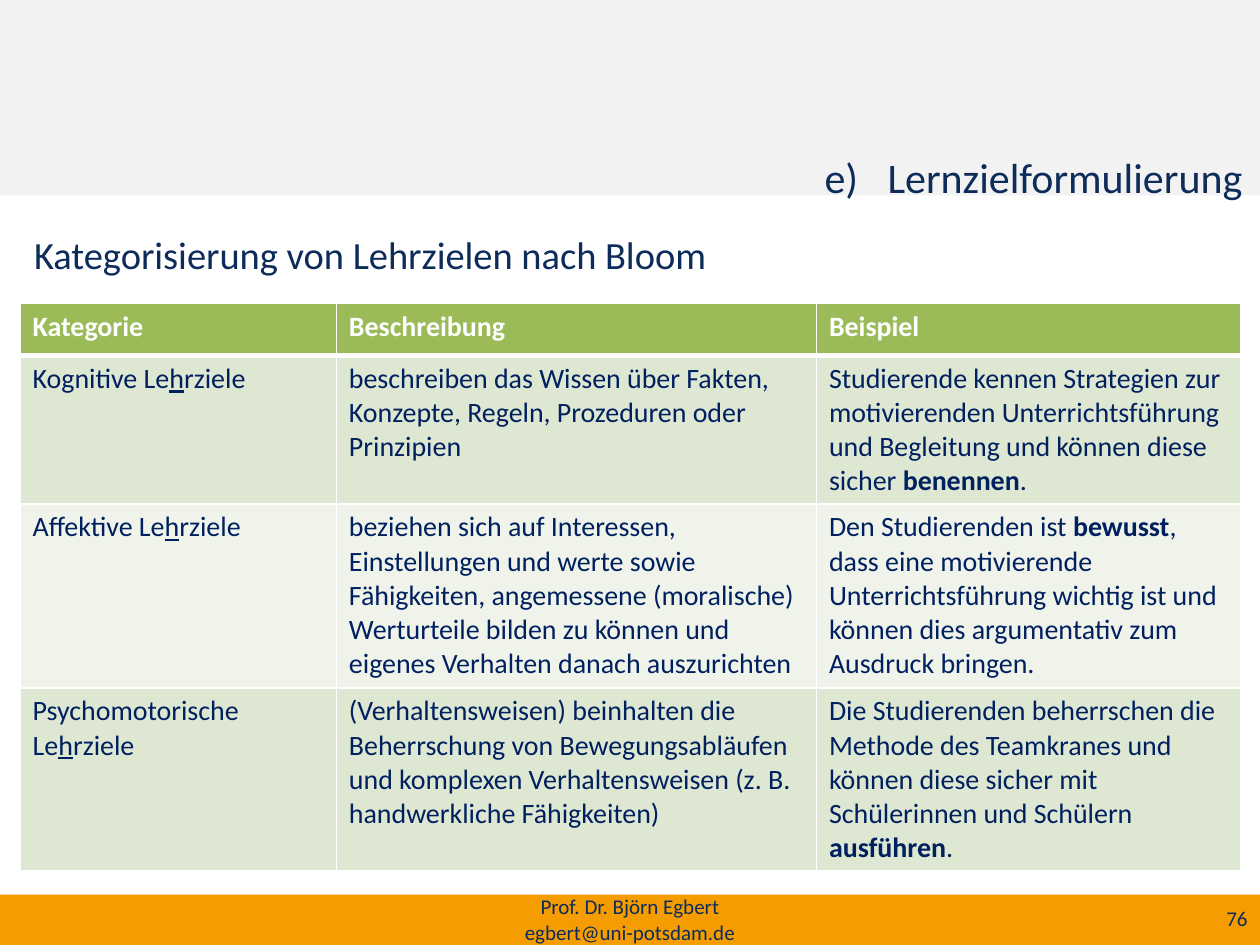
import pptx
import pptx.util
import pptx.dml.color
import pptx.enum.shapes
import pptx.enum.text
import pptx.oxml.ns
from lxml import etree

Inches = pptx.util.Inches
Pt = pptx.util.Pt
ALIGN = pptx.enum.text.PP_ALIGN
ANCHOR = pptx.enum.text.MSO_ANCHOR
qn = pptx.oxml.ns.qn

COLORS = {
    "band": "F2F2F2",
    "footer": "F59C00",
    "ink": "0D2C5A",
    "cell": "002060",
    "white": "FFFFFF",
    "header": "9BBB59",
    "odd": "DEE7D1",
    "even": "EFF3EA",
}

HEADER = ["Kategorie", "Beschreibung", "Beispiel"]
GOALS = [
    (
        "Kognitive Le",
        "beschreiben das Wissen über Fakten, Konzepte, Regeln, Prozeduren oder Prinzipien",
        [("Studierende kennen Strategien zur motivierenden Unterrichtsführung und "
          "Begleitung und können diese sicher ", ""), ("benennen", "b"), (".", "")],
    ),
    (
        "Affektive Le",
        "beziehen sich auf Interessen, Einstellungen und werte sowie Fähigkeiten, "
        "angemessene (moralische) Werturteile bilden zu können und eigenes Verhalten "
        "danach auszurichten",
        [("Den Studierenden ist ", ""), ("bewusst", "b"),
         (", dass eine motivierende Unterrichtsführung wichtig ist und können dies "
          "argumentativ zum Ausdruck bringen.", "")],
    ),
    (
        "Psychomotorische Le",
        "(Verhaltensweisen) beinhalten die Beherrschung von Bewegungsabläufen und "
        "komplexen Verhaltensweisen (z. B. handwerkliche Fähigkeiten)",
        [("Die Studierenden beherrschen die Methode des Teamkranes und können diese "
          "sicher mit Schülerinnen und Schülern ", ""), ("ausführen", "b"), (".", "")],
    ),
]


def rgb(name):
    return pptx.dml.color.RGBColor.from_string(COLORS[name])


class SlideBuilder:
    font = "Calibri"

    def __init__(self, page):
        self.page = page

    def add_span(self, para, text, size, color="ink", marks=""):
        span = para.add_run()
        span.text = text
        span.font.name = self.font
        span.font.size = Pt(size)
        span.font.color.rgb = rgb(color)
        span.font.bold = "b" in marks
        span.font.underline = "u" in marks

    def place(self, shape, left, top, width, height):
        shape.left, shape.top = Inches(left), Inches(top)
        shape.width, shape.height = Inches(width), Inches(height)

    def title(self, text, area, size):
        title = self.page.shapes.title
        self.place(title, *area)
        frame = title.text_frame
        frame.auto_size = pptx.enum.text.MSO_AUTO_SIZE.NONE
        frame.vertical_anchor = ANCHOR.TOP
        para = frame.paragraphs[0]
        para.alignment = ALIGN.LEFT
        self.add_span(para, text, size)

    def bar(self, area, color):
        bar = self.page.shapes.add_shape(
            pptx.enum.shapes.MSO_SHAPE.RECTANGLE, *map(Inches, area))
        bar.shadow.inherit = False
        bar.fill.solid()
        bar.fill.fore_color.rgb = rgb(color)
        bar.line.fill.background()

    def text(self, lines, area, size, align, anchor=ANCHOR.MIDDLE):
        box = self.page.shapes.add_textbox(*map(Inches, area))
        frame = box.text_frame
        frame.word_wrap = True
        frame.vertical_anchor = anchor
        para = frame.paragraphs[0]
        para.alignment = align
        for index, line in enumerate(lines):
            if index:
                para.add_line_break()
            self.add_span(para, line, size)
        return para

    def number(self, para, scheme, start, indent):
        properties = para._p.get_or_add_pPr()
        properties.set("marL", str(Inches(indent)))
        properties.set("indent", str(-Inches(indent)))
        etree.SubElement(properties, qn("a:buFont"), typeface="+mj-lt")
        etree.SubElement(properties, qn("a:buAutoNum"), type=scheme, startAt=str(start))

    def border(self, cell, widths):
        properties = cell._tc.get_or_add_tcPr()
        for side, width in zip("LRTB", widths):
            line = etree.SubElement(properties, qn("a:ln" + side), w=str(Pt(width)))
            fill = etree.SubElement(line, qn("a:solidFill"))
            etree.SubElement(fill, qn("a:srgbClr"), val=COLORS["white"])

    def table(self, rows, left, top, widths, heights, size):
        table = self.page.shapes.add_table(
            len(rows), len(widths), Inches(left), Inches(top),
            Inches(sum(widths)), Inches(sum(heights))).table
        for column, width in zip(table.columns, widths):
            column.width = Inches(width)
        for row, height in zip(table.rows, heights):
            row.height = Inches(height)
        for y, row in enumerate(rows):
            fill = "header" if y == 0 else "odd" if y % 2 else "even"
            color = "white" if y == 0 else "cell"
            for x, spans in enumerate(row):
                cell = table.cell(y, x)
                self.border(cell, (1, 1, 3 if y == 1 else 1, 3 if y == 0 else 1))
                cell.fill.solid()
                cell.fill.fore_color.rgb = rgb(fill)
                for text, marks in spans:
                    self.add_span(cell.text_frame.paragraphs[0], text, size, color, marks)


def main():
    deck = pptx.Presentation()
    deck.slide_width, deck.slide_height = Inches(10), Inches(7.5)
    slide = SlideBuilder(deck.slides.add_slide(deck.slide_layouts[5]))

    slide.bar((0, 0, 10, 1.55), "band")
    slide.bar((0, 7.1, 10, 0.4), "footer")
    slide.title("Kategorisierung von Lehrzielen nach Bloom", (0.17, 1.78, 8.62, 0.63), 22)
    slide.text(["76"], (7.6, 7.09, 2.4, 0.4), 12, ALIGN.RIGHT)
    slide.text(["Prof. Dr. Björn Egbert", "egbert@uni-potsdam.de"],
               (3.31, 7.09, 3.38, 0.41), 12, ALIGN.CENTER)

    rows = [[[(label, "b")] for label in HEADER]]
    for stem, description, example in GOALS:
        rows.append([[(stem, ""), ("h", "u"), ("rziele", "")], [(description, "")], example])
    slide.table(rows, 0.16, 2.41, [2.51, 3.81, 3.37], [0.41, 1.18, 1.46, 1.45], 16)

    chapter = slide.text(["Lernzielformulierung"], (1.34, 1.15, 8.62, 0.63), 24,
                         ALIGN.RIGHT, ANCHOR.TOP)
    slide.number(chapter, "alphaLcParenR", 5, 0.5)
    deck.save("out.pptx")


if __name__ == "__main__":
    main()
